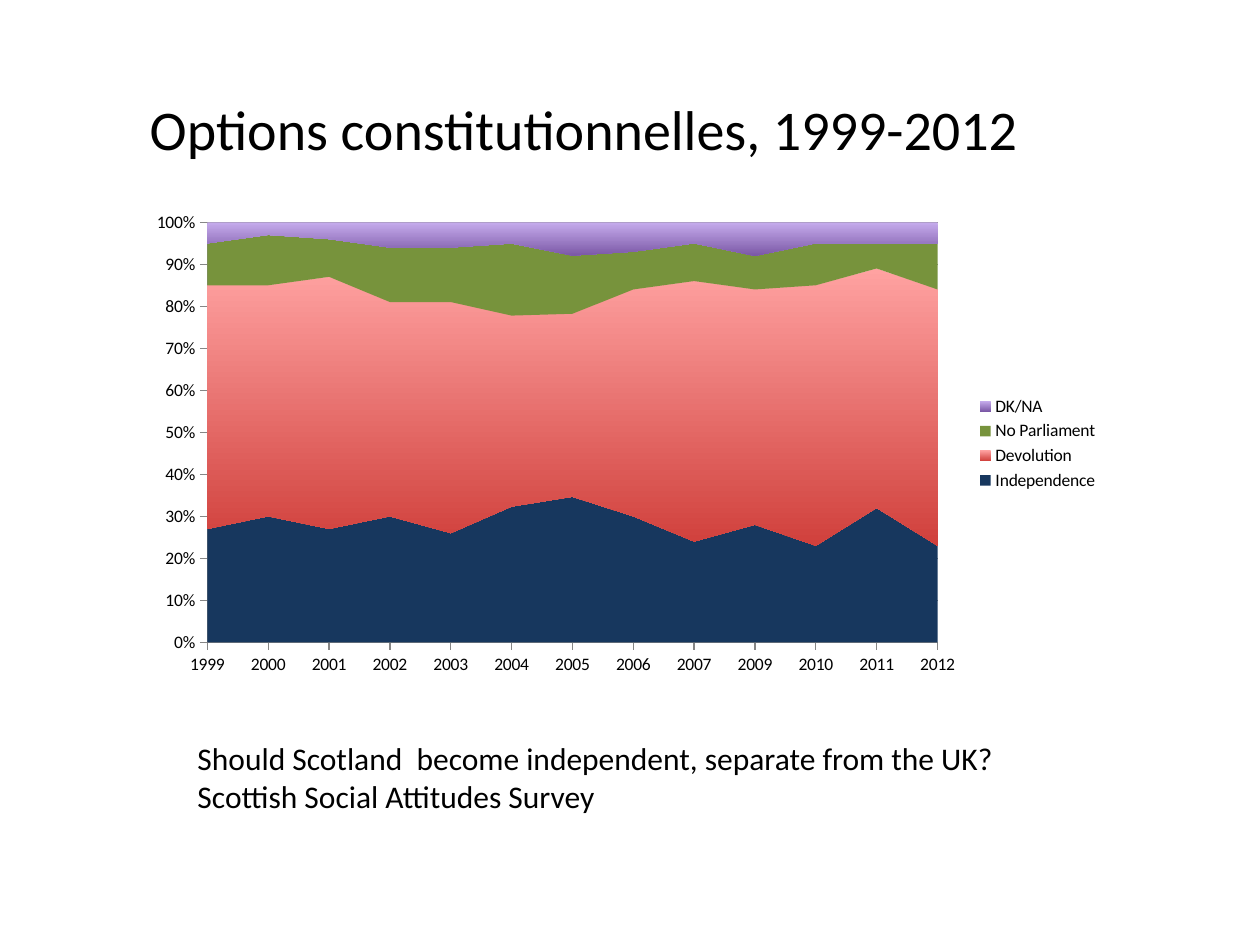
from dataclasses import dataclass
from typing import Any

from pptx import Presentation
from pptx import util as u
from pptx.chart import data as cd
from pptx.dml import color as dc
from pptx.enum import chart as ce, text as te


@dataclass(frozen=True)
class Theme:
    font: str = "Calibri"
    ink: str = "000000"
    axis: str = "868686"
    title: float = 32
    body: float = 18
    label: float = 10
    navy: tuple[str, ...] = ("17375E",)
    red: tuple[str, ...] = ("FFA2A1", "D0403C")
    green: tuple[str, ...] = ("77933C",)
    violet: tuple[str, ...] = ("C6ACED", "7B58A6")


@dataclass(frozen=True)
class Box:
    left: float
    top: float
    width: float
    height: float

    def place(self) -> tuple[u.Length, ...]:
        return tuple(u.Pt(n) for n in (self.left, self.top, self.width, self.height))


@dataclass(frozen=True)
class Note:
    box: Box
    lines: tuple[str, ...]
    size: float
    wrap: bool


@dataclass(frozen=True)
class Band:
    name: str
    vals: tuple[int, ...]
    tones: tuple[str, ...]


THEME = Theme()
YEARS = [str(y) for y in range(1999, 2013) if y != 2008]
BANDS = (
    Band("Independence", (27, 30, 27, 30, 26, 32, 35, 30, 24, 28, 23, 32, 23), THEME.navy),
    Band("Devolution", (58, 55, 60, 51, 55, 45, 44, 54, 62, 56, 62, 57, 61), THEME.red),
    Band("No Parliament", (10, 12, 9, 13, 13, 17, 14, 9, 9, 8, 10, 6, 11), THEME.green),
    Band("DK/NA", (5, 3, 4, 6, 6, 5, 8, 7, 5, 8, 5, 5, 5), THEME.violet),
)
NOTES = (
    Note(Box(78.5, 50.4, 592.5, 46), ("Options constitutionnelles, 1999-2012",), THEME.title, True),
    Note(
        Box(105.8, 419, 475.2, 51),
        ("Should Scotland  become independent, separate from the UK?",
         "Scottish Social Attitudes Survey"),
        THEME.body,
        False,
    ),
)
PLOT = Box(78.5, 115.9, 556.6, 275)


def rgb(tone: str) -> dc.RGBColor:
    return dc.RGBColor.from_string(tone)


def style(font: Any, size: float) -> None:
    font.name = THEME.font
    font.size = u.Pt(size)
    font.color.rgb = rgb(THEME.ink)


def paint(fill: Any, tones: tuple[str, ...]) -> None:
    if len(tones) == 1:
        fill.solid()
        fill.fore_color.rgb = rgb(tones[0])
        return
    fill.gradient()
    fill.gradient_angle = 270
    for stop, tone in zip(fill.gradient_stops, tones):
        stop.color.rgb = rgb(tone)


def write(slide: Any, note: Note) -> None:
    frame = slide.shapes.add_textbox(*note.box.place()).text_frame
    frame.word_wrap = note.wrap
    frame.auto_size = te.MSO_AUTO_SIZE.SHAPE_TO_FIT_TEXT
    frame.text = "\n".join(note.lines)
    for para in frame.paragraphs:
        style(para.font, note.size)


def plot(slide: Any) -> None:
    data = cd.CategoryChartData(number_format="0")
    data.categories = YEARS
    for band in BANDS:
        data.add_series(band.name, band.vals)
    kind = ce.XL_CHART_TYPE.AREA_STACKED_100
    chart = slide.shapes.add_chart(kind, *PLOT.place(), data).chart
    style(chart.font, THEME.label)
    chart.has_title = False
    chart.has_legend = True
    chart.legend.position = ce.XL_LEGEND_POSITION.RIGHT
    chart.legend.include_in_layout = False
    chart.plots[0].vary_by_categories = False
    for band, series in zip(BANDS, chart.plots[0].series):
        paint(series.format.fill, band.tones)
    for axis in (chart.category_axis, chart.value_axis):
        axis.major_tick_mark = ce.XL_TICK_MARK.OUTSIDE
        axis.minor_tick_mark = ce.XL_TICK_MARK.NONE
        axis.format.line.color.rgb = rgb(THEME.axis)
        axis.format.line.width = u.Pt(0.75)
    chart.category_axis.has_major_gridlines = False
    scale = chart.value_axis
    scale.has_major_gridlines = True
    scale.major_gridlines.format.line.color.rgb = rgb(THEME.axis)
    scale.tick_labels.number_format = "0%"
    scale.tick_labels.number_format_is_linked = False
    for cross in chart.element.xpath(".//c:valAx/c:crossBetween"):
        cross.set("val", "midCat")


def main() -> None:
    """Build the slide on Scotland's constitutional options."""
    deck = Presentation()
    deck.slide_width, deck.slide_height = u.Pt(720), u.Pt(540)
    slide = deck.slides.add_slide(deck.slide_layouts[6])
    plot(slide)
    for note in NOTES:
        write(slide, note)
    deck.save("out.pptx")


if __name__ == "__main__":
    main()
